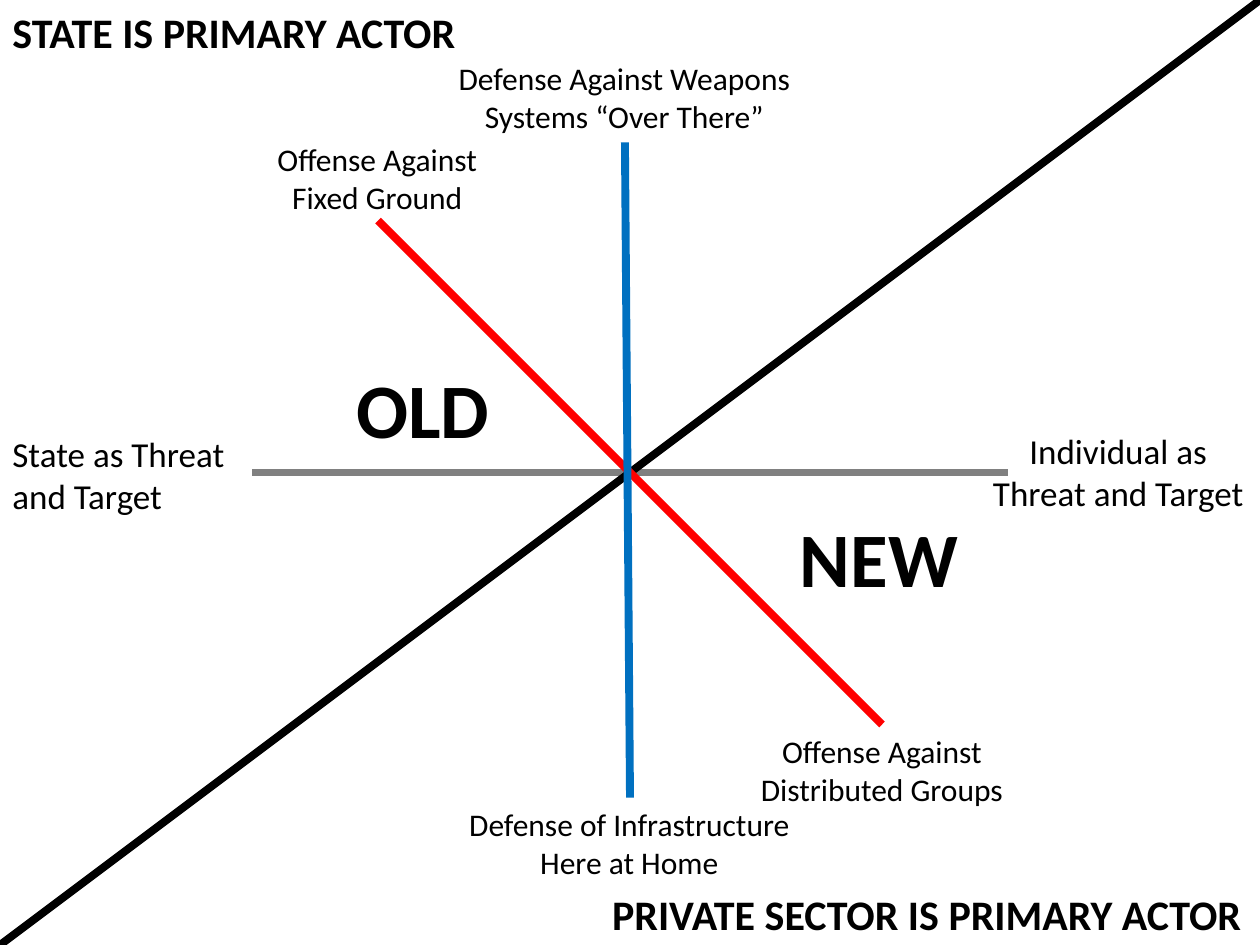
from typing import NamedTuple

from lxml import etree
from pptx import Presentation
from pptx.dml.color import RGBColor
from pptx.enum.shapes import MSO_CONNECTOR
from pptx.enum.text import MSO_AUTO_SIZE, PP_ALIGN
from pptx.oxml.ns import qn
from pptx.util import Inches, Pt

STRAIGHT = MSO_CONNECTOR.STRAIGHT
FIT_SHAPE = MSO_AUTO_SIZE.SHAPE_TO_FIT_TEXT
LEFT, CENTER = PP_ALIGN.LEFT, PP_ALIGN.CENTER

FONT = "Calibri"
BLACK = "000000"
GRAY = "808080"
RED = "FF0000"
BLUE = "0070C0"
AXIS_WIDTH = 4.5
WIDTH, HEIGHT = 10, 7.5


class Axis(NamedTuple):
    x1: float
    y1: float
    x2: float
    y2: float
    color: str


class Label(NamedTuple):
    text: str
    left: float
    top: float
    width: float
    height: float
    size: int
    align: PP_ALIGN = CENTER
    bold: bool = False
    wrap: bool = True


AXES = [
    Axis(2, HEIGHT / 2, 8, HEIGHT / 2, GRAY),
    Axis(0, HEIGHT, WIDTH, 0, BLACK),
    Axis(3, 1.75, 7, 5.75, RED),
    Axis(5, 6.33, 4.96, 1.13, BLUE),
]

HEADINGS = [
    Label("OLD", 2.73, 2.82, 1.27, 0.84, 44, LEFT, True, False),
    Label("NEW", 6.25, 4, 1.47, 0.84, 44, LEFT, True, False),
    Label("STATE IS PRIMARY ACTOR", 0, 0, 3.75, 0.5, 24, LEFT, True, False),
    Label("PRIVATE SECTOR IS PRIMARY ACTOR", 4.76, 7, 5.24, 0.5, 24, LEFT, True, False),
]

AXIS_ENDS = [
    Label("Offense Against Fixed Ground", 2.08, 1.06, 1.83, 0.71, 18),
    Label("Offense Against Distributed Groups", 5.85, 5.76, 2.3, 0.71, 18),
    Label("State as Threat and Target", 0, 3.38, 1.96, 0.77, 20, LEFT),
    Label("Individual as Threat and Target", 7.75, 3.36, 2.25, 0.77, 20),
    Label("Defense Against Weapons Systems “Over There”", 3.5, 0.42, 2.91, 0.71, 18),
    Label("Defense of Infrastructure Here at Home", 3.58, 6.34, 2.83, 0.71, 18),
]


def rgb(color: str) -> RGBColor:
    return RGBColor.from_string(color)


def draw_axis(slide, axis: Axis) -> None:
    ends = (Inches(v) for v in axis[:4])
    connector = slide.shapes.add_connector(STRAIGHT, *ends)
    connector.line.color.rgb = rgb(axis.color)
    connector.line.width = Pt(AXIS_WIDTH)
    # An empty effect list removes the theme shadow
    etree.SubElement(connector._element.spPr, qn("a:effectLst"))


def draw_label(slide, label: Label) -> None:
    box = slide.shapes.add_textbox(
        Inches(label.left), Inches(label.top), Inches(label.width), Inches(label.height)
    )
    frame = box.text_frame
    frame.word_wrap = label.wrap
    frame.auto_size = FIT_SHAPE
    paragraph = frame.paragraphs[0]
    paragraph.text = label.text
    paragraph.alignment = label.align
    paragraph.font.name = FONT
    paragraph.font.size = Pt(label.size)
    paragraph.font.bold = label.bold
    paragraph.font.color.rgb = rgb(BLACK)


def main() -> None:
    prs = Presentation()
    prs.slide_width, prs.slide_height = Inches(WIDTH), Inches(HEIGHT)
    slide = prs.slides.add_slide(prs.slide_layouts[6])

    # Crossing axes, with the vertical one on top
    for axis in AXES:
        draw_axis(slide, axis)

    # Quadrant headings and the names at the axis ends
    for label in HEADINGS + AXIS_ENDS:
        draw_label(slide, label)

    prs.save("out.pptx")


if __name__ == "__main__":
    main()
